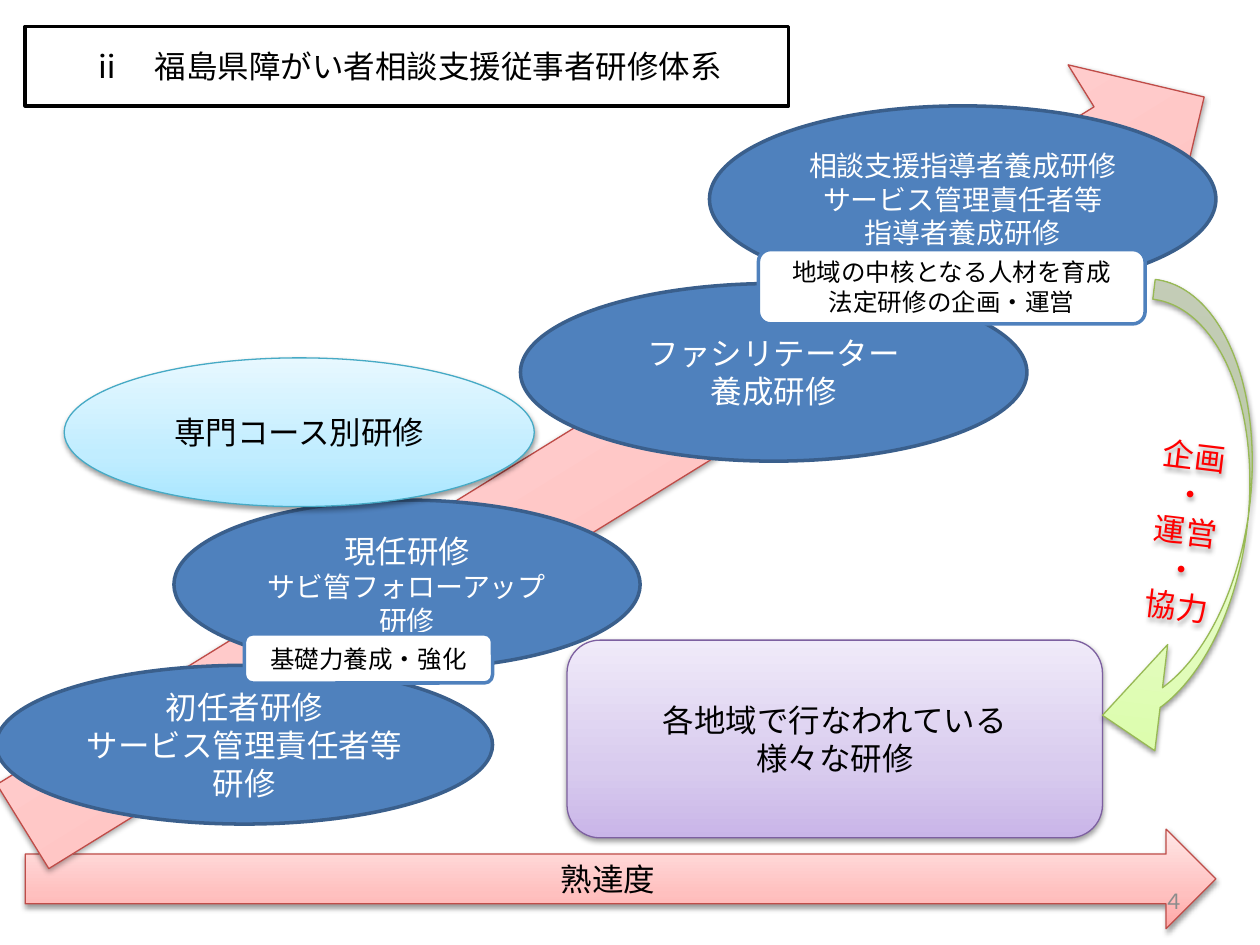
from lxml import etree
from pptx import Presentation
from pptx.dml.color import RGBColor
from pptx.enum.shapes import MSO_SHAPE
from pptx.enum.text import MSO_ANCHOR, PP_ALIGN
from pptx.oxml.ns import qn
from pptx.util import Pt

FONT = "Calibri"
RED = (("FFA6A5", "FFC0BF", "FFE7E7"), "BF4C48")
CYAN = (("A7E6FF", "C1EDFF", "E7F8FF"), "46AAC5")
PURPLE = (("C9B5E8", "D8CBEE", "F0EAF9"), "7D60A0")
GREEN = (("DAFDA7", "E4FCC2", "F5FFE7"), "98B955")
BLUE = ("4F81BD", "3A5F8C")
WHITE = ("FFFFFF", "4F81BD")
BOXED = ("FFFFFF", "000000")


def rgb(value):
    return RGBColor.from_string(value)


def child(parent, tag, **attrs):
    return etree.SubElement(parent, qn(tag), {k: str(v) for k, v in attrs.items()})


def add_shadow(effects, blur, dist, angle, alpha):
    shadow = child(effects, "a:outerShdw", blurRad=Pt(blur), dist=Pt(dist),
                   dir=angle * 60000, algn="ctr", rotWithShape=0)
    color = child(shadow, "a:srgbClr", val="000000")
    child(color, "a:alpha", val=alpha * 1000)


def fill_gradient(sp, colors):
    """Three stops running upward, with a soft shadow below."""
    props = sp._element.spPr
    grad = etree.Element(qn("a:gradFill"), rotWithShape="1")
    stops = child(grad, "a:gsLst")
    for pos, color in zip((0, 35, 100), colors):
        child(child(stops, "a:gs", pos=pos * 1000), "a:srgbClr", val=color)
    child(grad, "a:lin", ang=270 * 60000, scaled=1)
    props.find(qn("a:prstGeom")).addnext(grad)
    add_shadow(props.find(qn("a:effectLst")), 3.1, 1.6, 90, 38)


def write(tf, lines, color, align=PP_ALIGN.CENTER):
    """Lines are (text, size) pairs, one paragraph each."""
    tf.word_wrap = True
    tf.vertical_anchor = MSO_ANCHOR.MIDDLE
    for i, (text, size) in enumerate(lines):
        p = tf.paragraphs[0] if i == 0 else tf.add_paragraph()
        p.alignment = align
        r = p.add_run()
        r.text = text
        for name, value in {"name": FONT, "size": Pt(size)}.items():
            setattr(r.font, name, value)
        r.font.color.rgb = rgb(color)


def place(slide, kind, box, at, style, lines=(), color="000000", rotation=0):
    """Draws one shape; at is offset and size within the box."""
    x, y, w, h = at
    sp = slide.shapes.add_shape(kind, Pt(box[0] + x), Pt(box[1] + y), Pt(w), Pt(h))
    fill, line = style
    sp.rotation = rotation
    sp.shadow.inherit = False
    sp.line.color.rgb = rgb(line)
    if isinstance(fill, tuple):
        sp.line.width = Pt(0.75)
        fill_gradient(sp, fill)
    else:
        sp.line.width = Pt(2)
        sp.fill.solid()
        sp.fill.fore_color.rgb = rgb(fill)
    write(sp.text_frame, lines, color)
    return sp


def add_title(slide, box):
    place(slide, MSO_SHAPE.RECTANGLE, box, (0, 0, *box[2:]), BOXED,
          [("ⅱ　福島県障がい者相談支援従事者研修体系", 18)])


def add_skill_axis(slide, box):
    place(slide, MSO_SHAPE.RIGHT_ARROW, box, (0, 0, *box[2:]), RED, [("熟達度", 18)])


def add_training_steps(slide, box):
    # Rising arrow behind the steps
    place(slide, MSO_SHAPE.RIGHT_ARROW, box, (-46.1, 147.4, 793.4, 113), RED,
          rotation=328.3)

    # Steps from first to last, with their aims over the joins
    oval, label = MSO_SHAPE.OVAL, MSO_SHAPE.ROUNDED_RECTANGLE
    white, black = "FFFFFF", "000000"
    steps = [
        (oval, (-2.2, 320.2, 283.7, 90.7), BLUE, white,
         [("初任者研修", 18), ("サービス管理責任者等研修", 18)]),
        (oval, (99.4, 225.8, 266.4, 96.5), BLUE, white,
         [("現任研修", 18), ("サビ管フォローアップ研修", 16)]),
        (oval, (36.7, 144.5, 268.6, 85), CYAN, black,
         [("専門コース別研修", 18)]),
        (oval, (297.4, 102, 289.4, 101.5), BLUE, white,
         [("ファシリテーター", 18), ("養成研修", 18)]),
        (label, (139.7, 302.2, 141.8, 28.1), WHITE, black,
         [("基礎力養成・強化", 14)]),
        (oval, (405.4, 0.5, 289.4, 106.6), BLUE, white,
         [("相談支援指導者養成研修", 16), ("サービス管理責任者等", 16),
          ("指導者養成研修", 16)]),
        (label, (433.4, 82.6, 221, 42.5), WHITE, black,
         [("地域の中核となる人材を育成", 14), ("法定研修の企画・運営", 14)]),
    ]
    for kind, at, style, color, lines in steps:
        place(slide, kind, box, at, style, lines, color)


def add_regional_training(slide, box):
    place(slide, MSO_SHAPE.ROUNDED_RECTANGLE, box, (0, 203, 306, 113), PURPLE,
          [("各地域で行なわれている", 18), ("様々な研修", 18)])

    # Support arrow from the leaders down to the regions
    words = ("企画", "・", "運営", "・", "協力")
    sp = place(slide, MSO_SHAPE.CURVED_LEFT_ARROW, box, (319, 0, 69.1, 281.5), GREEN,
               [(word, 18) for word in words], "FF0000", rotation=6.9)
    for i, value in enumerate((0.165, 0.885, 0.465)):
        sp.adjustments[i] = value
    for p in sp.text_frame.paragraphs:
        effects = etree.Element(qn("a:effectLst"))
        add_shadow(effects, 3, 3, 45, 43)
        p.runs[0].font._element.find(qn("a:solidFill")).addnext(effects)


def add_page_number(slide, box):
    tb = slide.shapes.add_textbox(*map(Pt, box))
    write(tb.text_frame, [("４", 12)], "8C8C8C", PP_ALIGN.RIGHT)


def main():
    prs = Presentation()
    prs.slide_width, prs.slide_height = Pt(720), Pt(540)
    slide = prs.slides.add_slide(prs.slide_layouts[6])
    add_skill_axis(slide, (14.4, 473.8, 680.4, 56.9))
    add_training_steps(slide, (0, 60, 720, 411))
    add_regional_training(slide, (324, 162.8, 388, 316))
    add_title(slide, (14.4, 15.1, 436.3, 45.4))
    add_page_number(slide, (516.2, 500.4, 167.8, 28.8))
    prs.save("out.pptx")


if __name__ == "__main__":
    main()
